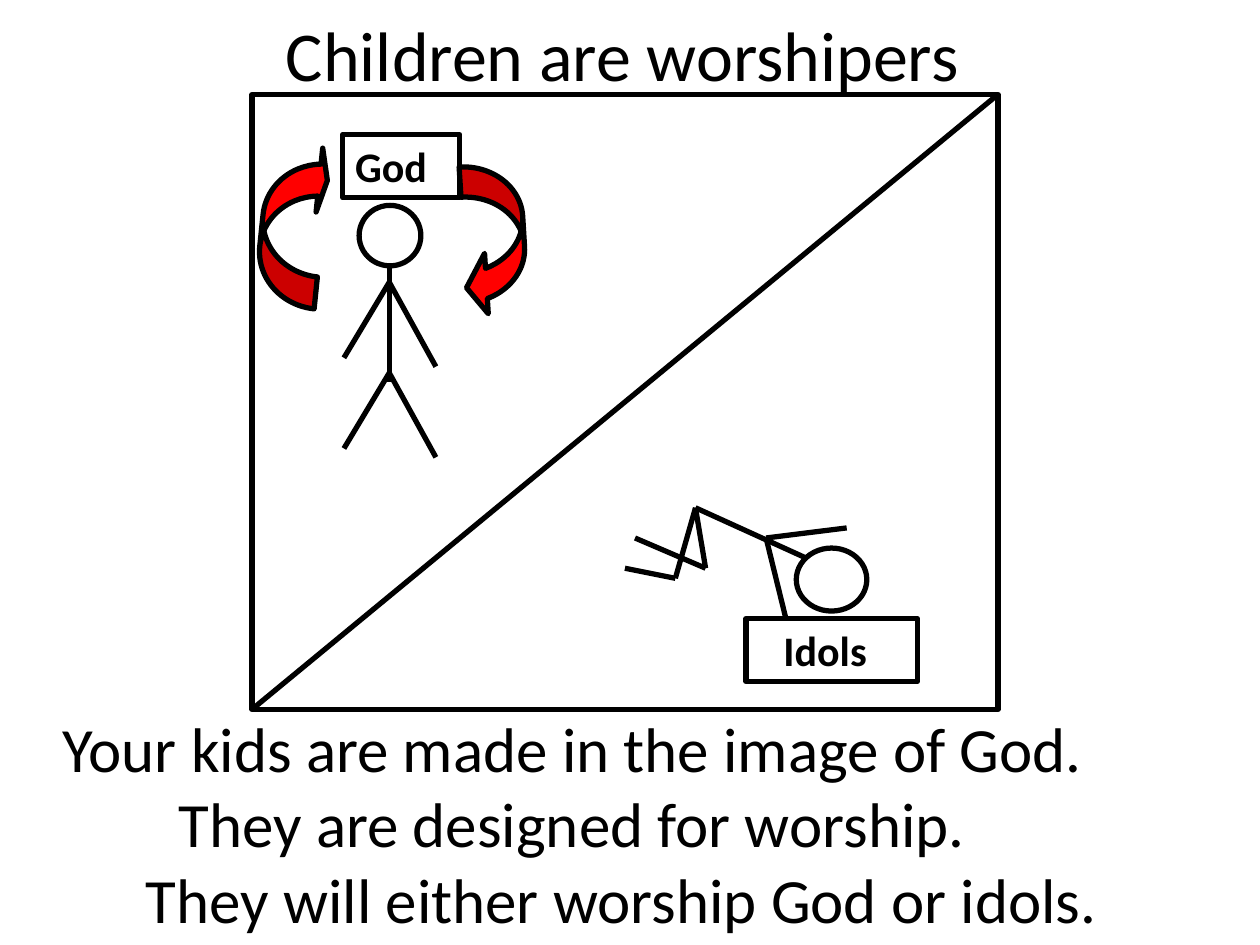
from dataclasses import dataclass

import pptx
import pptx.dml.color
import pptx.enum.shapes
import pptx.enum.text
import pptx.util
from lxml import etree

Inches = pptx.util.Inches
Pt = pptx.util.Pt
Shapes = pptx.enum.shapes.MSO_SHAPE
Align = pptx.enum.text.PP_ALIGN
Anchor = pptx.enum.text.MSO_ANCHOR

BLACK = "000000"
RED = "FF0000"
Point = tuple[float, float]


@dataclass
class Outline:
    kind: int
    left: float
    top: float
    width: float
    height: float
    fill: str = ""
    rotation: float = 0
    adjustments: tuple[float, ...] = ()


def color(value: str) -> pptx.dml.color.RGBColor:
    return pptx.dml.color.RGBColor.from_string(value)


def style_line(line) -> None:
    line.color.rgb = color(BLACK)
    line.width = Pt(3)


def style_shape(shape, fill: str = "") -> None:
    shape.shadow.inherit = False
    style_line(shape.line)
    if fill:
        shape.fill.solid()
        shape.fill.fore_color.rgb = color(fill)
    else:
        shape.fill.background()


def draw_outline(page, item: Outline):
    shape = page.shapes.add_shape(item.kind, Inches(item.left), Inches(item.top),
                                  Inches(item.width), Inches(item.height))
    style_shape(shape, item.fill)
    shape.rotation = item.rotation
    for index, value in enumerate(item.adjustments):
        shape.adjustments[index] = value
    return shape


def draw_line(page, start: Point, end: Point) -> None:
    line = page.shapes.add_connector(pptx.enum.shapes.MSO_CONNECTOR.STRAIGHT,
                                     *map(Inches, start + end))
    style_line(line.line)
    etree.SubElement(line.line._get_or_add_ln().getparent(),
                     pptx.oxml.ns.qn("a:effectLst"))


def draw_limbs(page, left: float, top: float) -> None:
    """Draw a pair of arms or legs hanging from the spine."""
    builder = page.shapes.build_freeform(Inches(left), Inches(top + 0.6))
    builder.add_line_segments([(Inches(left + 0.36), Inches(top)),
                               (Inches(left + 0.73), Inches(top + 0.67))], close=False)
    style_shape(builder.convert_to_shape())


def write(para, text: str, size: int, bold: bool = False, indent: float = 0,
          alignment=Align.LEFT) -> None:
    para.alignment = alignment
    if indent:
        para._p.get_or_add_pPr().set("marL", str(Inches(indent)))
    span = para.add_run()
    span.text = text
    span.font.color.rgb = color(BLACK)
    for name, value in {"name": "Calibri", "size": Pt(size), "bold": bold}.items():
        setattr(span.font, name, value)


def draw_label(page, text: str, item: Outline, indent: float = 0) -> None:
    frame = draw_outline(page, item).text_frame
    frame.vertical_anchor = Anchor.TOP
    write(frame.paragraphs[0], text, 24, True, indent)


def main() -> None:
    deck = pptx.Presentation()
    deck.slide_width, deck.slide_height = Inches(10), Inches(7.5)
    page = deck.slides.add_slide(deck.slide_layouts[5])

    # Title
    title = page.shapes.title
    place = {"left": 0.63, "top": -0.67, "width": 8.62, "height": 1.49}
    for name, value in place.items():
        setattr(title, name, Inches(value))
    title.text_frame.vertical_anchor = Anchor.BOTTOM
    heading = title.text_frame.paragraphs[0]
    heading.line_spacing = 0.9
    write(heading, "Children are worshipers", 40, alignment=Align.CENTER)

    # Statements below the drawing, each with its own indent
    box = page.shapes.add_textbox(Inches(0.33), Inches(5.58), Inches(9.33), Inches(1.92))
    frame = box.text_frame
    frame.word_wrap = True
    statements = [("Your kids are made in the image of God.", 0.07),
                  ("They are designed for worship.", 0.99),
                  ("They will either worship God or idols.", 0.73)]
    for index, (text, indent) in enumerate(statements):
        para = frame.add_paragraph() if index else frame.paragraphs[0]
        write(para, text, 36, indent=indent)

    # Frame split by a diagonal
    draw_outline(page, Outline(Shapes.RECTANGLE, 2, 0.75, 5.92, 4.88))
    draw_line(page, (2, 5.63), (7.92, 0.75))

    # Standing figure worshiping God
    draw_label(page, "God", Outline(Shapes.RECTANGLE, 2.72, 1.07, 0.93, 0.5))
    arrow = Shapes.CURVED_DOWN_ARROW
    for item in (
        Outline(arrow, 1.68, 1.55, 1.28, 0.48, RED, 275.9, (0.531, 1.062, 0.132)),
        Outline(arrow, 3.32, 1.67, 1.2, 0.48, RED, 86.5, (0.5, 1, 0.333)),
        Outline(Shapes.OVAL, 2.85, 1.63, 0.49, 0.48),
    ):
        draw_outline(page, item)
    draw_line(page, (3.09, 2.12), (3.09, 3.03))
    for top in (2.24, 2.96):
        draw_limbs(page, 2.73, top)

    # Kneeling figure bowing to idols
    draw_outline(page, Outline(Shapes.OVAL, 6.32, 4.35, 0.56, 0.5))
    neck, shoulder, hip = (6.4, 4.43), (6.08, 4.27), (5.52, 4.03)
    knees = [(5.6, 4.51), (5.36, 4.59)]
    feet = [(5.04, 4.27), (4.96, 4.51)]
    hands = [(6.24, 4.92), (6.72, 4.19)]
    draw_line(page, neck, hip)
    for knee, foot, hand in zip(knees, feet, hands):
        draw_line(page, hip, knee)
        draw_line(page, knee, foot)
        draw_line(page, shoulder, hand)
    draw_label(page, "Idols", Outline(Shapes.RECTANGLE, 5.92, 4.91, 1.36, 0.5), 0.2)

    deck.save("out.pptx")


if __name__ == "__main__":
    main()
